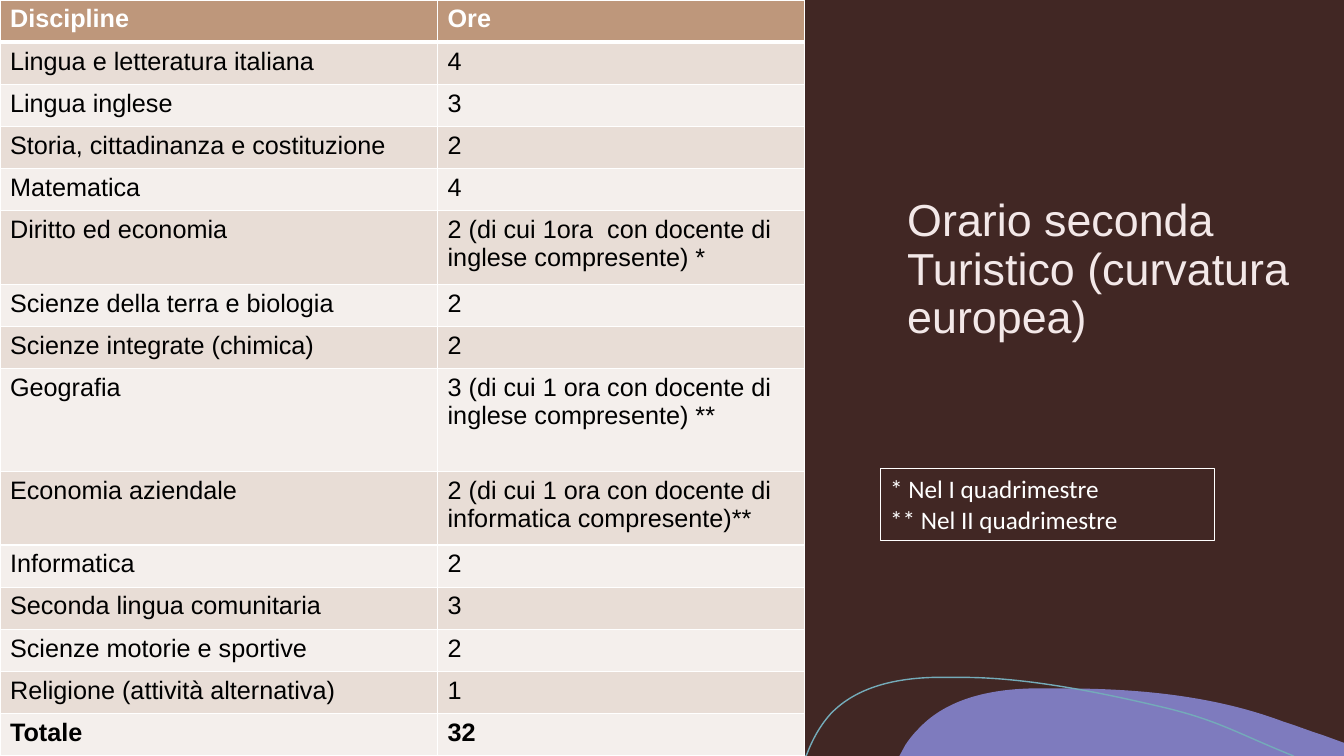
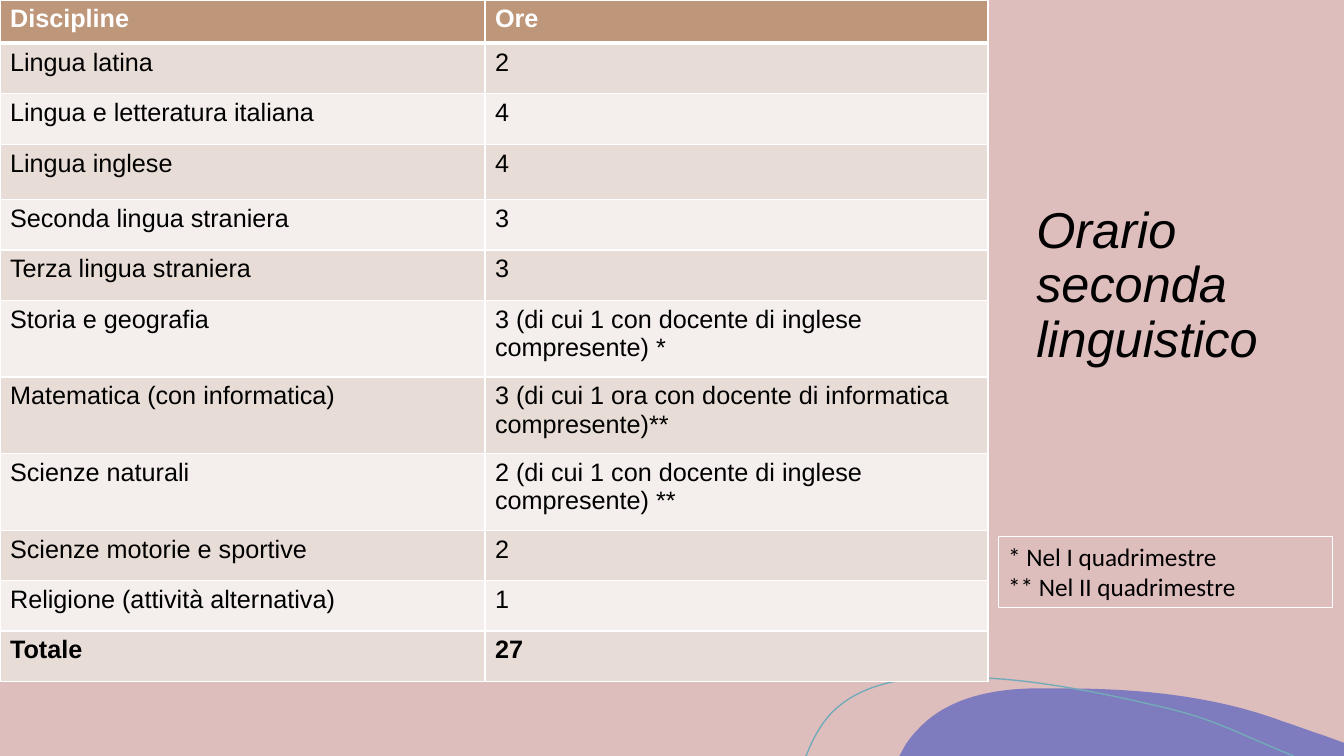
from lxml import etree
from pptx import Presentation
from pptx.dml.color import RGBColor
from pptx.enum import shapes, text
from pptx.oxml import ns
from pptx.util import Inches, Pt

SLIDE_WIDTH, SLIDE_HEIGHT = 13.33, 7.5
BROWN = RGBColor(0x41, 0x27, 0x24)
PINK = RGBColor(0xDE, 0xBD, 0xBD)
CREAM = RGBColor(0xF3, 0xE8, 0xE8)
TAN = RGBColor(0xBE, 0x97, 0x7B)
ROW_DARK = RGBColor(0xE8, 0xDD, 0xD6)
ROW_LIGHT = RGBColor(0xF4, 0xEF, 0xEC)
VIOLET = RGBColor(0x7E, 0x7B, 0xBE)
TEAL = RGBColor(0x74, 0xAB, 0xB9)
WHITE = RGBColor(0xFF, 0xFF, 0xFF)
BLACK = RGBColor(0, 0, 0)

# Outlines: a start point, then steps of one point (line) or three (Bézier curve).
HILL = [(10.54, 6.83),
        (11.28, 6.83, 12.04, 6.9, 12.73, 7.16),
        (12.86, 7.2, 12.98, 7.25, 13.11, 7.29),
        (13.33, 7.37), (13.33, 7.5), (8.92, 7.5), (8.98, 7.39),
        (9.02, 7.33, 9.06, 7.28, 9.11, 7.23),
        (9.39, 6.93, 9.82, 6.84, 10.23, 6.83),
        (10.33, 6.83, 10.43, 6.83, 10.54, 6.83)]
LEAF = [(0, 0.75), (0.01, 0.76),
        (0.3, 1.02, 0.54, 1.33, 0.48, 1.7),
        (0.46, 1.87, 0.37, 2.03, 0.27, 2.18),
        (0.24, 2.24, 0.17, 2.33, 0.08, 2.44),
        (0, 2.54)]
WAVE = [(7.99, 7.5), (8, 7.49),
        (8.06, 7.33, 8.14, 7.19, 8.24, 7.08),
        (8.5, 6.81, 8.89, 6.73, 9.26, 6.72),
        (9.55, 6.72),
        (10.22, 6.72, 11, 6.89, 11.55, 7.02),
        (12.09, 7.15, 12.26, 7.27, 12.83, 7.5)]

HEADER = ("Discipline", "Ore")
TERMS = ("* Nel I quadrimestre", "** Nel II quadrimestre")

TOURISM_HOURS = [
    HEADER,
    ("Lingua e letteratura italiana", "4"),
    ("Lingua inglese", "3"),
    ("Storia, cittadinanza e costituzione", "2"),
    ("Matematica", "4"),
    ("Diritto ed economia", "2 (di cui 1ora  con docente di inglese compresente) *"),
    ("Scienze della terra e biologia", "2"),
    ("Scienze integrate (chimica)", "2"),
    ("Geografia", "3 (di cui 1 ora con docente di inglese compresente) **"),
    ("Economia aziendale", "2 (di cui 1 ora con docente di informatica compresente)**"),
    ("Informatica", "2"),
    ("Seconda lingua comunitaria", "3"),
    ("Scienze motorie e sportive", "2"),
    ("Religione (attività alternativa)", "1"),
    ("Totale", "32"),
]
LANGUAGE_HOURS = [
    HEADER,
    ("Lingua latina", "2"),
    ("Lingua e letteratura italiana", "4"),
    ("Lingua inglese", "4"),
    ("Seconda lingua straniera", "3"),
    ("Terza lingua straniera", "3"),
    ("Storia e geografia", "3 (di cui 1 con docente di inglese compresente) *"),
    ("Matematica (con informatica)", "3 (di cui 1 ora con docente di informatica compresente)**"),
    ("Scienze naturali", "2 (di cui 1 con docente di inglese compresente) **"),
    ("Scienze motorie e sportive", "2"),
    ("Religione (attività alternativa)", "1"),
    ("Totale", "27"),
]


def bend(shape, steps):
    """Turn the lines of a freeform into Bézier curves where a step has handles."""
    lines = list(shape._element.iter(ns.qn("a:lnTo")))
    for line, step in zip(lines, steps):
        if len(step) == 2:
            continue
        line.tag = ns.qn("a:cubicBezTo")
        for i, (x, y) in enumerate((step[0:2], step[2:4])):
            handle = etree.Element(ns.qn("a:pt"), x=str(Inches(x) - shape.left),
                                   y=str(Inches(y) - shape.top))
            line.insert(i, handle)


def set_font(paragraph, name, size, color, bold=False, italic=False):
    font = paragraph.font
    font.name, font.size = name, Pt(size)
    font.bold, font.italic = bold, italic
    font.color.rgb = color


def set_borders(cell, widths):
    """Draw white borders; widths gives points for left, right, top, bottom."""
    properties = cell._tc.get_or_add_tcPr()
    for side, width in zip("LRTB", widths):
        line = etree.SubElement(properties, ns.qn(f"a:ln{side}"), w=str(Pt(width)))
        fill = etree.SubElement(line, ns.qn("a:solidFill"))
        etree.SubElement(fill, ns.qn("a:srgbClr"), val=str(WHITE))


class Timetable:
    """Holds the presentation, its style and the current slide."""

    def __init__(self):
        self.deck = Presentation()
        self.deck.slide_width = Inches(SLIDE_WIDTH)
        self.deck.slide_height = Inches(SLIDE_HEIGHT)
        self.slide = None

    def new_slide(self, background):
        self.slide = self.deck.slides.add_slide(self.deck.slide_layouts[6])
        fill = self.slide.background.fill
        fill.solid()
        fill.fore_color.rgb = background
        for steps, color in ((HILL, VIOLET), (LEAF, TAN)):
            blob = self.outline(steps, close=True)
            blob.fill.solid()
            blob.fill.fore_color.rgb = color
            blob.line.fill.background()
        wave = self.outline(WAVE, close=False)
        wave.fill.background()
        wave.line.color.rgb = TEAL
        wave.line.width = Pt(1)

    def outline(self, steps, close):
        ends = [(Inches(step[-2]), Inches(step[-1])) for step in steps]
        builder = self.slide.shapes.build_freeform(*ends[0])
        builder.add_line_segments(ends[1:], close=close)
        shape = builder.convert_to_shape()
        shape.shadow.inherit = False
        bend(shape, steps[1:])
        return shape

    def title(self, words, left, width, height, space_below, size, color, italic=False):
        box = self.slide.shapes.add_textbox(*map(Inches, (left, 0.83, width, height)))
        frame = box.text_frame
        frame.word_wrap = True
        frame.vertical_anchor = text.MSO_ANCHOR.MIDDLE
        frame.margin_bottom = Inches(space_below)
        paragraph = frame.paragraphs[0]
        paragraph.text = words
        paragraph.line_spacing = 0.9
        set_font(paragraph, "Arial", size, color, italic=italic)

    def hours(self, rows, column_widths, row_heights):
        frame = self.slide.shapes.add_table(
            len(rows), len(column_widths), 0, 0,
            Inches(sum(column_widths)), Inches(sum(row_heights)))
        table = frame.table
        for column, width in zip(table.columns, column_widths):
            column.width = Inches(width)
        for r, (entries, height) in enumerate(zip(rows, row_heights)):
            table.rows[r].height = Inches(height)
            band = TAN if r == 0 else ROW_DARK if r % 2 else ROW_LIGHT
            widths = (1, 1, 3 if r == 1 else 1, 3 if r == 0 else 1)
            for c, entry in enumerate(entries):
                cell = table.cell(r, c)
                cell.text = entry
                set_font(cell.text_frame.paragraphs[0], "Arial", 18,
                         WHITE if r == 0 else BLACK, bold=r in (0, len(rows) - 1))
                set_borders(cell, widths)
                cell.fill.solid()
                cell.fill.fore_color.rgb = band

    def legend(self, left, top, color):
        box = self.slide.shapes.add_shape(
            shapes.MSO_SHAPE.RECTANGLE, *map(Inches, (left, top, 3.32, 0.71)))
        box.shadow.inherit = False
        box.fill.background()
        box.line.color.rgb = WHITE
        box.line.width = Pt(0.75)
        frame = box.text_frame
        frame.word_wrap = True
        frame.vertical_anchor = text.MSO_ANCHOR.TOP
        frame.auto_size = text.MSO_AUTO_SIZE.SHAPE_TO_FIT_TEXT
        frame.text = "\n".join(TERMS)
        for paragraph in frame.paragraphs:
            paragraph.alignment = text.PP_ALIGN.LEFT
            set_font(paragraph, "Calibri", 18, color)

    def save(self):
        self.deck.save("out.pptx")


def main():
    timetable = Timetable()

    timetable.new_slide(BROWN)
    timetable.title("Orario seconda\vTuristico (curvatura europea)",
                    8.9, 4.07, 5.76, 2.1, 32, CREAM)
    tall = {5: 0.73, 8: 1.02, 9: 0.73}
    count = len(TOURISM_HOURS)
    plain = (SLIDE_HEIGHT - sum(tall.values())) / (count - len(tall))
    timetable.hours(TOURISM_HOURS, (4.34, 3.64),
                    [tall.get(r, plain) for r in range(count)])
    timetable.legend(8.73, 4.65, WHITE)

    timetable.new_slide(PINK)
    timetable.title("Orario seconda\vlinguistico",
                    10.18, 2.9, 4.76, 0.78, 36, BLACK, italic=True)
    tall = {0: 0.43, 3: 0.55, 6: 0.76, 7: 0.76, 8: 0.76}
    timetable.hours(LANGUAGE_HOURS, (4.81, 4.99),
                    [tall.get(r, 0.5) for r in range(len(LANGUAGE_HOURS))])
    timetable.legend(9.9, 5.32, BLACK)

    timetable.save()


if __name__ == "__main__":
    main()
